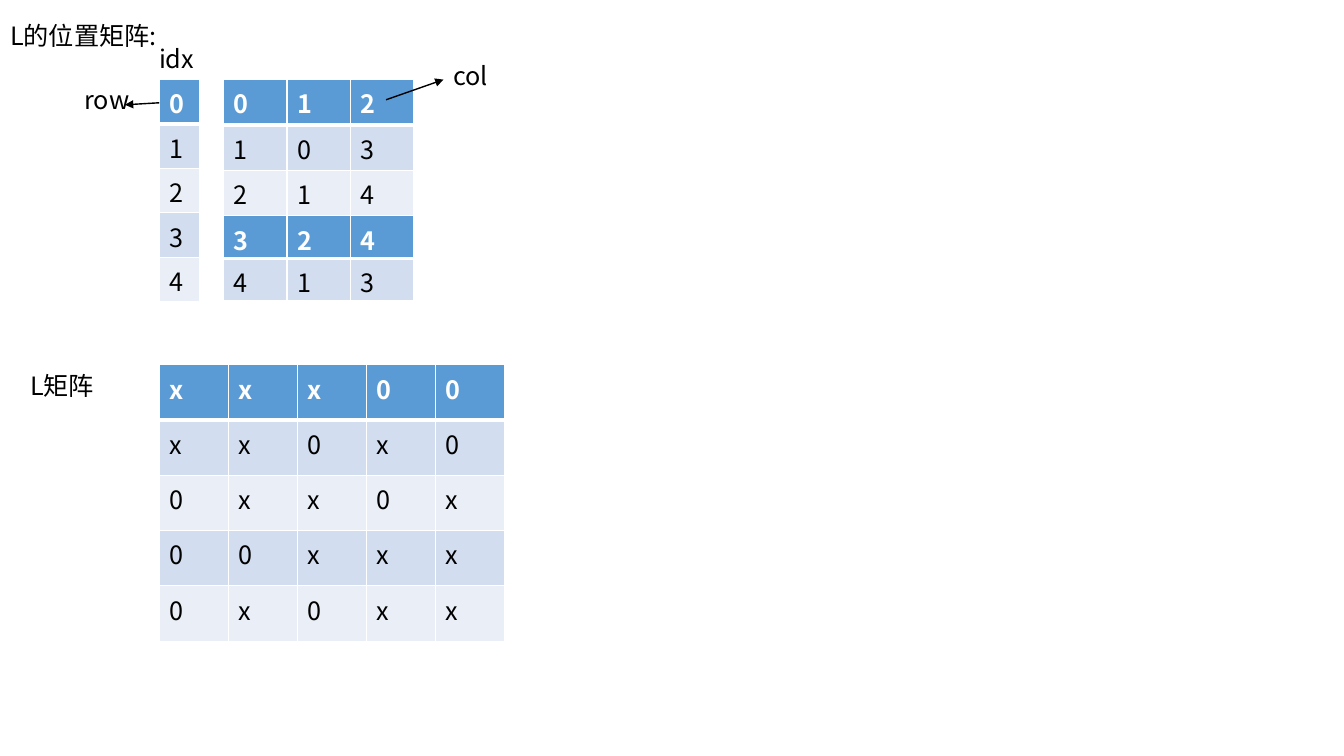
"""Build the slide that shows the position matrix of L next to L itself."""
from dataclasses import dataclass

from lxml import etree
from pptx import Presentation
from pptx.dml.color import RGBColor
from pptx.enum.shapes import MSO_CONNECTOR
from pptx.enum.text import MSO_ANCHOR, MSO_AUTO_SIZE, PP_ALIGN
from pptx.oxml.ns import qn
from pptx.oxml.xmlchemy import OxmlElement
from pptx.slide import Slide
from pptx.table import _Cell
from pptx.text.text import TextFrame
from pptx.util import Pt

STRAIGHT = MSO_CONNECTOR.STRAIGHT
TOP = MSO_ANCHOR.TOP
LEFT = PP_ALIGN.LEFT
FIT_SHAPE = MSO_AUTO_SIZE.SHAPE_TO_FIT_TEXT

FONT = "Noto Sans CJK SC"
FONT_SIZE = Pt(18)
TITLE_ONLY = 5
LABEL_HEIGHT = 29.08
BLACK = RGBColor(0x00, 0x00, 0x00)
WHITE = RGBColor(0xFF, 0xFF, 0xFF)
HEADER_BLUE = RGBColor(0x5B, 0x9B, 0xD5)
BANDS = (RGBColor(0xD2, 0xDE, 0xEF), RGBColor(0xEA, 0xEF, 0xF7))


@dataclass(frozen=True)
class Label:
    text: str
    left: float
    top: float
    width: float


@dataclass(frozen=True)
class Matrix:
    left: float
    top: float
    column_width: float
    row_height: float
    rows: tuple[str, ...]


@dataclass(frozen=True)
class Arrow:
    start: tuple[float, float]
    end: tuple[float, float]


TITLE = Label("L的位置矩阵:", 0, 10.8, 130)
LABELS = (
    Label("L矩阵", 14.4, 260.64, 77.76),
    Label("row", 53.28, 56.88, 52.56),
    Label("col", 316.8, 39.6, 52.56),
    Label("idx", 106.56, 27.36, 52.56),
)
MATRICES = (
    Matrix(159.84, 56.88, 45.2, 32.4, ("012", "103", "214")),
    Matrix(113.76, 260.64, 49.4, 39.46,
           ("xxx00", "xx0x0", "0xx0x", "00xxx", "0x0xx")),
    Matrix(159.84, 154.08, 45.2, 30.5, ("324", "413")),
    Matrix(113.76, 56.88, 28.5, 31.7, tuple("01234")),
)
ARROWS = (
    Arrow((275.76, 71.28), (316.8, 56.88)),
    Arrow((113.76, 73.44), (89.28, 74.88)),
)


def write(frame: TextFrame, text: str, color: RGBColor, bold: bool = False) -> None:
    """Write one left-aligned run in the slide's font."""
    frame.text = text
    paragraph = frame.paragraphs[0]
    paragraph.alignment = LEFT
    font = paragraph.runs[0].font
    font.name, font.size, font.bold = FONT, FONT_SIZE, bold
    font.color.rgb = color
    east_asian = OxmlElement("a:ea")
    east_asian.set("typeface", FONT)
    font._element.find(qn("a:latin")).addnext(east_asian)


def place_title(slide: Slide, label: Label) -> None:
    """Move and format the title placeholder."""
    title = slide.shapes.title
    title.left, title.top = Pt(label.left), Pt(label.top)
    title.width, title.height = Pt(label.width), Pt(LABEL_HEIGHT)
    frame = title.text_frame
    frame.word_wrap, frame.auto_size = True, FIT_SHAPE
    frame.vertical_anchor = TOP
    write(frame, label.text, BLACK)


def add_label(slide: Slide, label: Label) -> None:
    """Add one text label."""
    box = slide.shapes.add_textbox(
        Pt(label.left), Pt(label.top), Pt(label.width), Pt(LABEL_HEIGHT))
    frame = box.text_frame
    frame.word_wrap, frame.auto_size = True, FIT_SHAPE
    write(frame, label.text, BLACK)


def add_borders(cell: _Cell, row: int) -> None:
    """Draw white borders, heavy between the header and the body."""
    properties = cell._tc.get_or_add_tcPr()
    widths = {"L": 1, "R": 1, "T": 3 if row == 1 else 1, "B": 3 if row == 0 else 1}
    for side, width in widths.items():
        border = etree.SubElement(properties, qn(f"a:ln{side}"), w=str(Pt(width)))
        fill = etree.SubElement(border, qn("a:solidFill"))
        etree.SubElement(fill, qn("a:srgbClr"), val=str(WHITE))


def add_matrix(slide: Slide, matrix: Matrix) -> None:
    """Add a table with one character per cell and a blue first row."""
    row_count, column_count = len(matrix.rows), len(matrix.rows[0])
    table = slide.shapes.add_table(
        row_count, column_count, Pt(matrix.left), Pt(matrix.top),
        Pt(matrix.column_width * column_count),
        Pt(matrix.row_height * row_count)).table
    for column in table.columns:
        column.width = Pt(matrix.column_width)
    for row, values in enumerate(matrix.rows):
        table.rows[row].height = Pt(matrix.row_height)
        is_header = row == 0
        for column, value in enumerate(values):
            cell = table.cell(row, column)
            add_borders(cell, row)
            cell.fill.solid()
            cell.fill.fore_color.rgb = HEADER_BLUE if is_header else BANDS[(row - 1) % 2]
            write(cell.text_frame, value, WHITE if is_header else BLACK, is_header)


def add_arrow(slide: Slide, arrow: Arrow) -> None:
    """Add a thin black arrow without a shadow."""
    start_x, start_y = arrow.start
    end_x, end_y = arrow.end
    connector = slide.shapes.add_connector(
        STRAIGHT, Pt(start_x), Pt(start_y), Pt(end_x), Pt(end_y))
    connector.line.color.rgb = BLACK
    connector.line.width = Pt(1)
    etree.SubElement(connector.line._get_or_add_ln(), qn("a:tailEnd"), type="triangle")
    etree.SubElement(connector._element.spPr, qn("a:effectLst"))


def main() -> None:
    """Build and save the presentation."""
    presentation = Presentation()
    presentation.slide_width, presentation.slide_height = Pt(960), Pt(540)
    slide = presentation.slides.add_slide(presentation.slide_layouts[TITLE_ONLY])
    place_title(slide, TITLE)
    for matrix in MATRICES:
        add_matrix(slide, matrix)
    for label in LABELS:
        add_label(slide, label)
    for arrow in ARROWS:
        add_arrow(slide, arrow)
    presentation.save("out.pptx")


if __name__ == "__main__":
    main()
